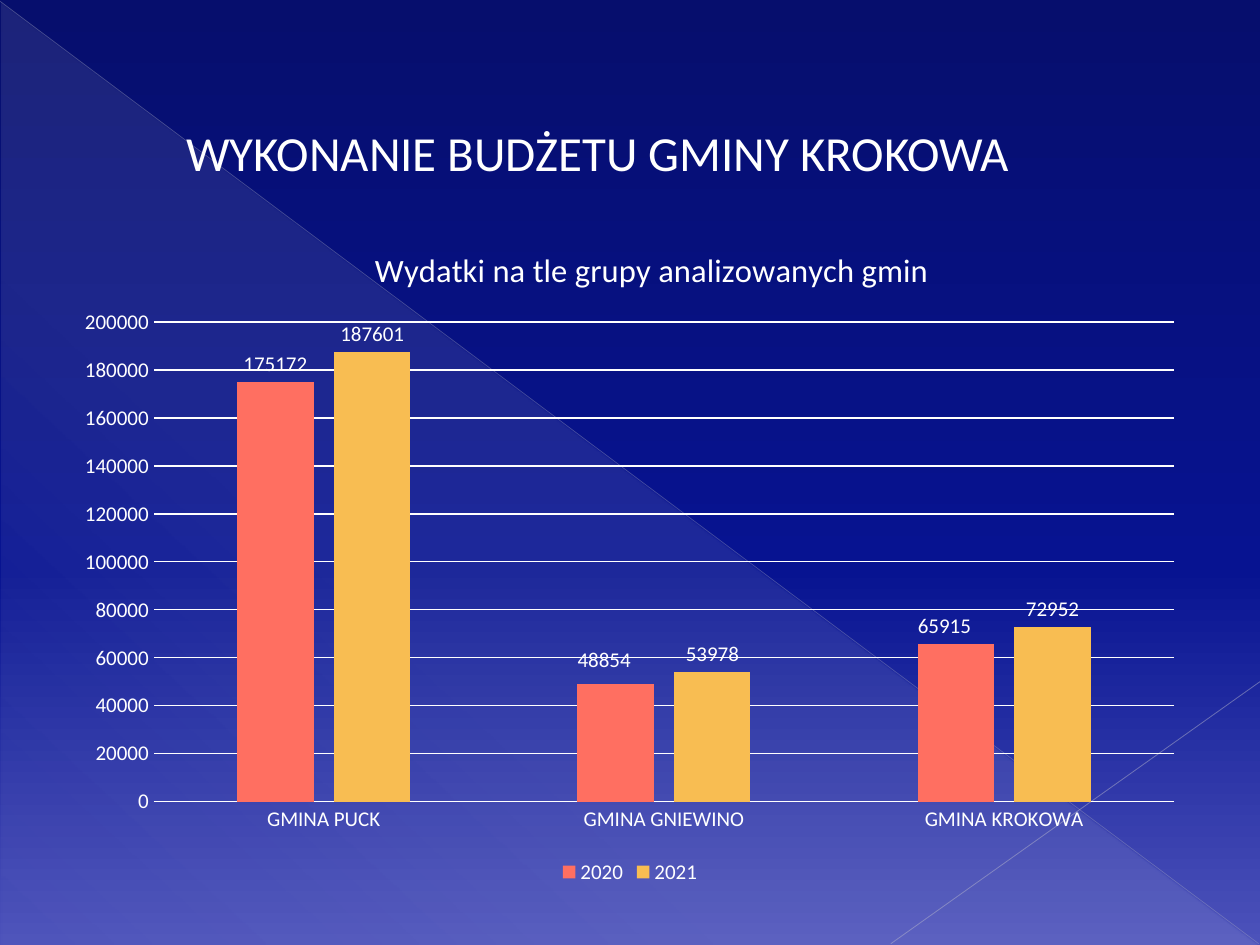
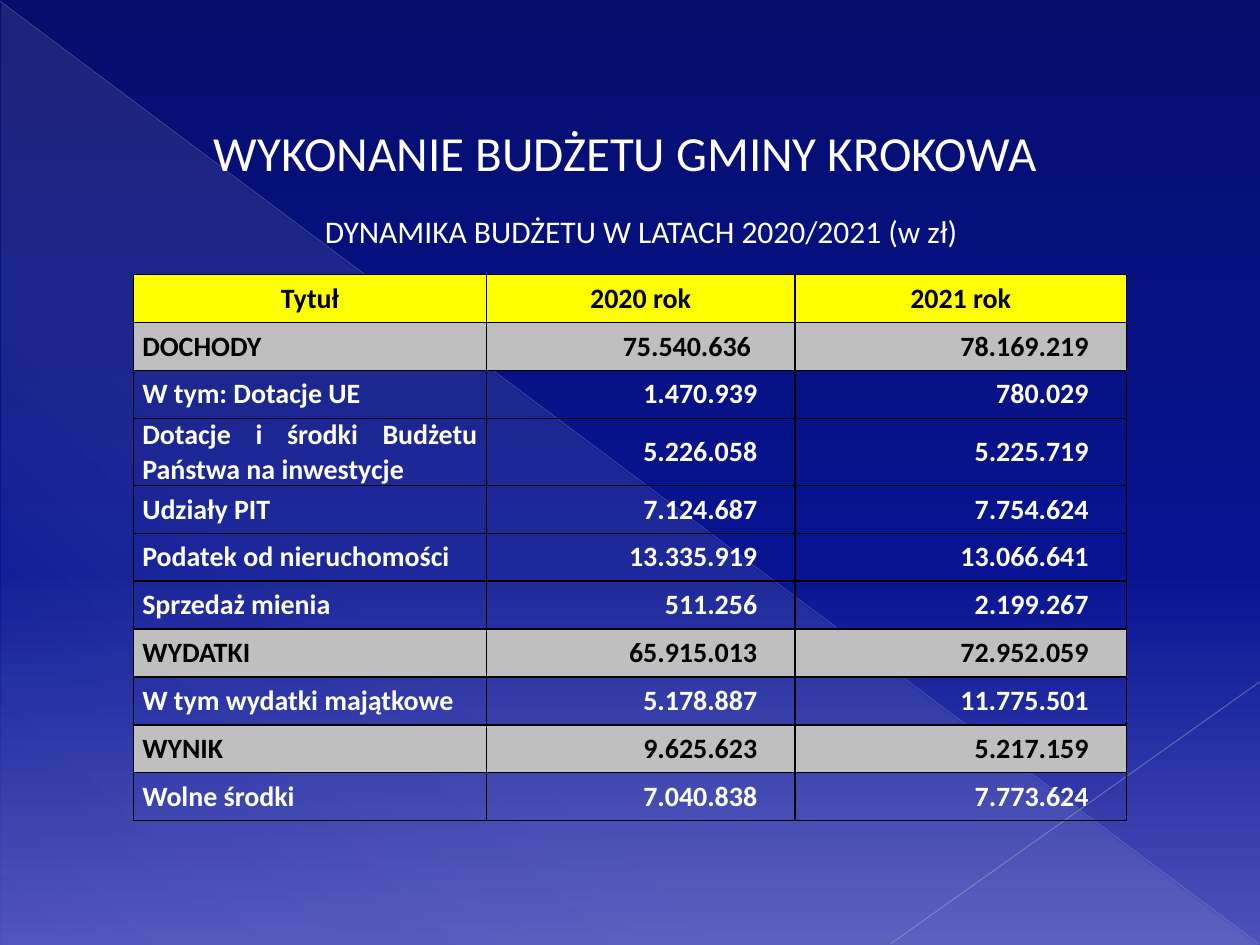
from lxml import etree
from pptx import Presentation
from pptx.chart.data import CategoryChartData
from pptx.dml.color import RGBColor
from pptx.enum import chart as ch, shapes, text
from pptx.oxml.ns import qn
from pptx.util import Inches, Pt

WHITE = RGBColor(0xFF, 0xFF, 0xFF)
BLACK = RGBColor(0, 0, 0)
NAVY = RGBColor(0x06, 0x0E, 0x6D)
BLUE = RGBColor(0x07, 0x13, 0x91)
VIOLET = RGBColor(0x4C, 0x52, 0xBA)
LONG_LINE = RGBColor(0xB1, 0xB2, 0xC7)
SHORT_LINE = RGBColor(0xBA, 0xBA, 0xCD)
CORAL = RGBColor(0xFF, 0x6F, 0x61)
AMBER = RGBColor(0xF8, 0xBD, 0x52)
YELLOW = RGBColor(0xFF, 0xFF, 0x00)
GREY = RGBColor(0xBF, 0xBF, 0xBF)
FONT = "Calibri"
TITLE = "WYKONANIE BUDŻETU GMINY KROKOWA"


def set_gradient(owner, fill, angle, stops):
    fill.gradient()
    grad = owner.find(".//" + qn("a:gradFill"))
    grad.find(qn("a:lin")).set("ang", str(angle * 60000))
    gs_lst = grad.find(qn("a:gsLst"))
    for old in list(gs_lst):
        gs_lst.remove(old)
    for pos, color, alpha in stops:
        gs = etree.SubElement(gs_lst, qn("a:gs"), pos=str(pos * 1000))
        clr = etree.SubElement(gs, qn("a:srgbClr"), val=str(color))
        etree.SubElement(clr, qn("a:alpha"), val=str(alpha * 1000))


def set_layout(parent, index, **values):
    for old in parent.findall(qn("c:layout")):
        parent.remove(old)
    layout = etree.Element(qn("c:layout"))
    manual = etree.SubElement(layout, qn("c:manualLayout"))
    for name, value in values.items():
        etree.SubElement(manual, qn("c:" + name), val=str(value))
    parent.insert(index, layout)


prs = Presentation()
prs.slide_width, prs.slide_height = Inches(10), Inches(7.5)
master = prs.slide_master
set_gradient(master.element, master.background.fill, 90,
             [(0, NAVY, 100), (60, BLUE, 100), (100, VIOLET, 100)])

rays = [
    ((0, 0.01, 9.99, 7.49), LONG_LINE, 0.39, 35),
    ((10, 5.41, 7.07, 7.49), SHORT_LINE, 0.47, 45),
]
slide_texts = [
    [(TITLE, 1.38, 0.92, 6.8, 0.57, 28)],
    [(TITLE, 1.6, 0.92, 6.8, 0.57, 28),
     ("DYNAMIKA BUDŻETU W LATACH 2020/2021 (w zł)", 2.48, 1.63, 5.28, 0.4, 18)],
]
for texts in slide_texts:
    s = prs.slides.add_slide(prs.slide_layouts[6])
    sp = s.shapes.add_shape(shapes.MSO_SHAPE.RIGHT_TRIANGLE, Inches(0.01), Inches(0.02),
                            Inches(9.98), Inches(7.48))
    sp.shadow.inherit = False
    sp.line.fill.background()
    set_gradient(sp.element, sp.fill, 133, [(0, WHITE, 10), (70, WHITE, 8), (100, WHITE, 1)])
    for ends, color, width, alpha in rays:
        ln = s.shapes.add_connector(shapes.MSO_CONNECTOR.STRAIGHT, *map(Inches, ends))
        ln.line.color.rgb = color
        ln.line.width = Pt(width)
        clr = ln.element.spPr.find(".//" + qn("a:srgbClr"))
        etree.SubElement(clr, qn("a:alpha"), val=str(alpha * 1000))
        etree.SubElement(ln.element.spPr, qn("a:effectLst"))
    for words, x, y, w, h, size in texts:
        tf = s.shapes.add_textbox(Inches(x), Inches(y), Inches(w), Inches(h)).text_frame
        tf.word_wrap = False
        tf.auto_size = text.MSO_AUTO_SIZE.SHAPE_TO_FIT_TEXT
        r = tf.paragraphs[0].add_run()
        r.text = words
        for name, value in {"name": FONT, "size": Pt(size)}.items():
            setattr(r.font, name, value)
        r.font.color.rgb = WHITE

chart_slide, table_slide = prs.slides

data = CategoryChartData(number_format="0")
data.categories = ["GMINA PUCK", "GMINA GNIEWINO", "GMINA KROKOWA"]
data.add_series("2020", (175172, 48854, 65915))
data.add_series("2021", (187601, 53978, 72952))
chart = chart_slide.shapes.add_chart(
    ch.XL_CHART_TYPE.COLUMN_CLUSTERED, Inches(0.5), Inches(1.7),
    Inches(9), Inches(5.36), data).chart
chart.has_title = True
title_tf = chart.chart_title.text_frame
title_tf.text = "Wydatki na tle grupy analizowanych gmin"
chart.has_legend = True
chart.legend.position = ch.XL_LEGEND_POSITION.BOTTOM
chart.legend.include_in_layout = False

plot = chart.plots[0]
plot.gap_width, plot.overlap, plot.vary_by_categories = 219, -27, False
cat, val = chart.category_axis, chart.value_axis
for axis in (cat, val):
    axis.major_tick_mark = axis.minor_tick_mark = ch.XL_TICK_MARK.NONE
val.minimum_scale, val.maximum_scale, val.major_unit = 0, 200000, 20000
val.has_major_gridlines = True
val.tick_labels.number_format = "0"
val.tick_labels.number_format_is_linked = False
val.format.line.fill.background()
for line in (cat.format.line, val.major_gridlines.format.line):
    line.color.rgb = WHITE
    line.width = Pt(0.75)

fonts = [(chart.font, 10), (title_tf.paragraphs[0].runs[0].font, 18.6),
         (chart.legend.font, 12), (cat.tick_labels.font, 12), (val.tick_labels.font, 12)]
for series, color in zip(plot.series, (CORAL, AMBER)):
    series.format.fill.solid()
    series.format.fill.fore_color.rgb = color
    series.invert_if_negative = False
    labels = series.data_labels
    labels.show_value = True
    labels.number_format, labels.number_format_is_linked = "0", False
    labels.position = ch.XL_LABEL_POSITION.OUTSIDE_END
    fonts.append((labels.font, 12))
for point, dx, dy in ((1, -0.01, -0.01), (2, -0.01, 0)):
    label = plot.series[0].points[point].data_label
    label.position = ch.XL_LABEL_POSITION.OUTSIDE_END
    fonts.append((label.font, 12))
    set_layout(chart.element.findall(".//" + qn("c:dLbl"))[-1], 1, x=dx, y=dy)
for font, size in fonts:
    for name, value in {"name": FONT, "size": Pt(size), "bold": False}.items():
        setattr(font, name, value)
    font.color.rgb = WHITE
set_layout(chart.element.find(".//" + qn("c:title")), 1,
           xMode="edge", yMode="edge", x=0.27, y=0.04)
set_layout(chart.element.find(".//" + qn("c:plotArea")), 0, layoutTarget="inner",
           xMode="edge", yMode="edge", x=0.08, y=0.16, w=0.9, h=0.71)

budget = [
    ("Tytuł", "2020 rok", "2021 rok"),
    ("DOCHODY ", "75.540.636 ", "78.169.219"),
    ("W tym: Dotacje UE", "1.470.939", "780.029"),
    ("Dotacje i środki Budżetu Państwa na inwestycje", "5.226.058", "5.225.719"),
    ("Udziały PIT", "7.124.687", "7.754.624"),
    ("Podatek od nieruchomości", "13.335.919", "13.066.641"),
    ("Sprzedaż mienia", "511.256", "2.199.267"),
    ("WYDATKI", "65.915.013", "72.952.059"),
    ("W tym wydatki majątkowe", "5.178.887", "11.775.501"),
    ("WYNIK", "9.625.623", "5.217.159"),
    ("Wolne środki", "7.040.838", "7.773.624"),
]
row_fills = {0: YELLOW, 1: GREY, 7: GREY, 9: GREY}
table = table_slide.shapes.add_table(len(budget), 3, Inches(1.06), Inches(2.18),
                                     Inches(7.88), Inches(4.18)).table
table.first_row = table.horz_banding = False
for col, width in zip(table.columns, (2.8, 2.45, 2.63)):
    col.width = Inches(width)
for i, row in enumerate(budget):
    table.rows[i].height = Inches(0.38)
    for j, words in enumerate(row):
        cell = table.cell(i, j)
        is_amount = i > 0 and j > 0
        cell.vertical_anchor = text.MSO_ANCHOR.MIDDLE
        margins = {"left": 0.07, "top": 0, "right": 0.3 if is_amount else 0.07, "bottom": 0}
        for side, value in margins.items():
            setattr(cell, "margin_" + side, Inches(value))
        if i in row_fills:
            cell.fill.solid()
            cell.fill.fore_color.rgb = row_fills[i]
        else:
            cell.fill.background()
        p = cell.text_frame.paragraphs[0]
        p.alignment = (text.PP_ALIGN.CENTER if i == 0 else
                       text.PP_ALIGN.RIGHT if is_amount else text.PP_ALIGN.JUSTIFY)
        if i > 0:
            p.space_after = Pt(6)
        r = p.add_run()
        r.text = words
        for name, value in {"name": FONT, "size": Pt(16), "bold": True}.items():
            setattr(r.font, name, value)
        r.font.color.rgb = BLACK if i in row_fills else WHITE
        tc_pr = cell.fill and cell.text_frame and table.cell(i, j).text_frame and None
        tc_pr = table.cell(i, j).fill and p
for tc_pr in table_slide.shapes.element.iter(qn("a:tcPr")):
    for k, side in enumerate(("lnL", "lnR", "lnT", "lnB")):
        ln = etree.Element(qn("a:" + side), w=str(Pt(1)))
        fill = etree.SubElement(ln, qn("a:solidFill"))
        etree.SubElement(fill, qn("a:srgbClr"), val=str(BLACK))
        tc_pr.insert(k, ln)

prs.save("out.pptx")
